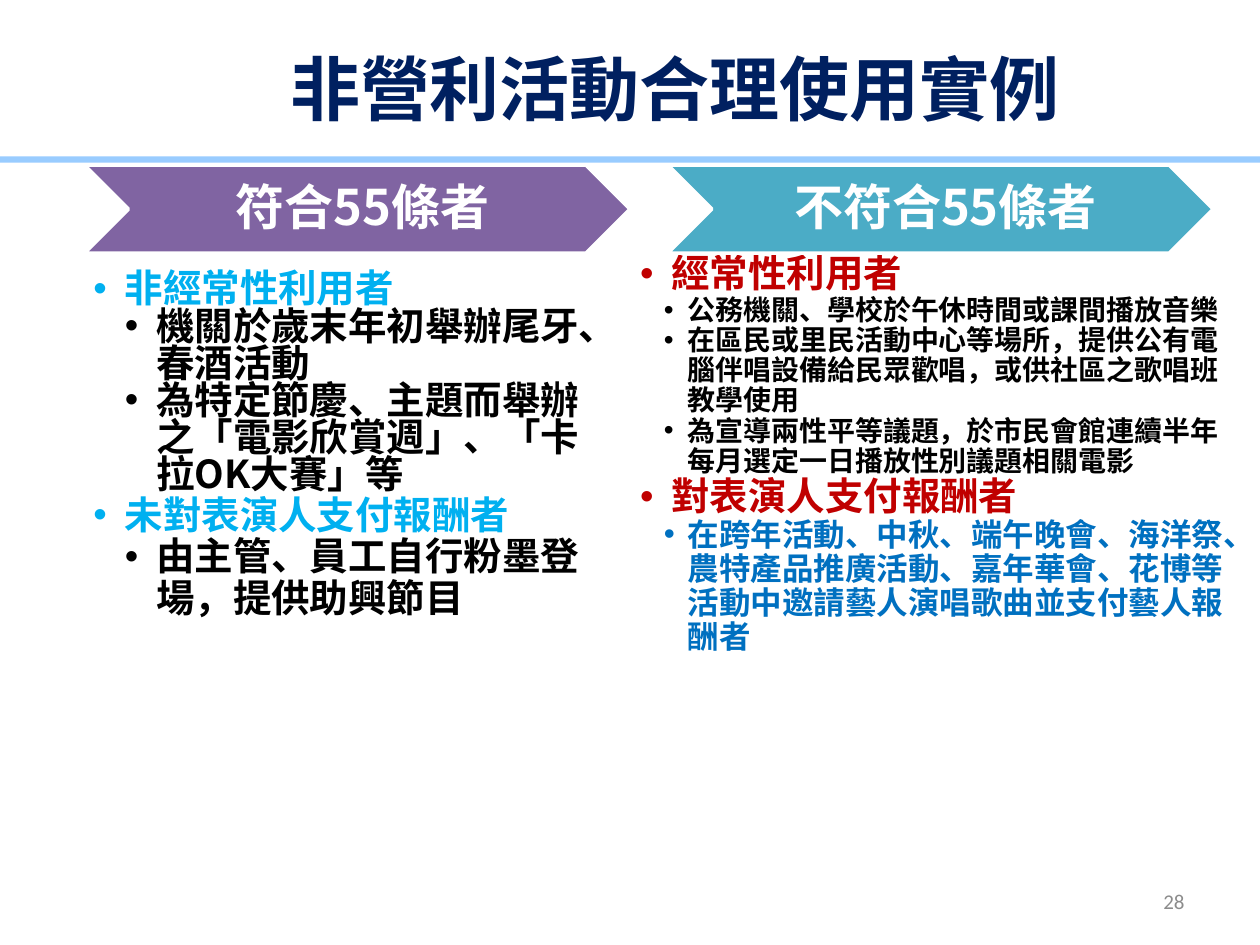
from lxml import etree
from pptx import Presentation
from pptx.dml.color import RGBColor
from pptx.enum.shapes import MSO_SHAPE
from pptx.enum.text import MSO_ANCHOR, MSO_AUTO_SIZE, PP_ALIGN
from pptx.oxml.ns import qn
from pptx.util import Inches, Pt

COLORS = {
    "navy": "002060", "rule": "99CCFF", "purple": "8064A2", "teal": "4BACC6",
    "white": "FFFFFF", "black": "000000", "sky": "00B0F0", "red": "C00000",
    "blue": "0070C0", "gray": "8C8C8C",
}
CJK_FONT = "Noto Sans CJK SC"


class SlideBuilder:
    """Holds the style and the current slide."""

    def __init__(self, slide):
        self.slide = slide

    def color(self, name):
        return RGBColor.from_string(COLORS[name])

    def place(self, shape, left, top, width, height):
        shape.left, shape.top = Inches(left), Inches(top)
        shape.width, shape.height = Inches(width), Inches(height)

    def frame(self, shape, insets=None, anchor=MSO_ANCHOR.MIDDLE):
        frame = shape.text_frame
        frame.word_wrap = True
        frame.auto_size = MSO_AUTO_SIZE.NONE
        frame.vertical_anchor = anchor
        if insets:
            (frame.margin_left, frame.margin_top,
             frame.margin_right, frame.margin_bottom) = map(Inches, insets)
        return frame

    def run(self, paragraph, text, size, color, bold=True, font=CJK_FONT):
        run = paragraph.add_run()
        run.text = text
        run.font.size = Pt(size)
        run.font.bold = bold
        run.font.color.rgb = self.color(color)
        run.font.name = font
        east_asian = etree.SubElement(run.font._element, qn("a:ea"))
        east_asian.set("typeface", font)

    def title(self, text, box):
        shape = self.slide.shapes.title
        self.place(shape, *box)
        paragraph = self.frame(shape).paragraphs[0]
        paragraph.alignment = PP_ALIGN.CENTER
        self.run(paragraph, text, 40, "navy")

    def shape(self, preset, box, fill, line=None):
        shape = self.slide.shapes.add_shape(preset, *map(Inches, box))
        shape.shadow.inherit = False
        shape.fill.solid()
        shape.fill.fore_color.rgb = self.color(fill)
        if line:
            shape.line.color.rgb = self.color(line)
            shape.line.width = Pt(2)
        else:
            shape.line.fill.background()

    def text(self, text, box, size, color, align, insets=None, spacing=None, **style):
        shape = self.slide.shapes.add_textbox(*map(Inches, box))
        paragraph = self.frame(shape, insets).paragraphs[0]
        paragraph.alignment = align
        paragraph.line_spacing = spacing
        self.run(paragraph, text, size, color, **style)

    def header(self, text, left, fill):
        top, height = 1.31, 0.7
        self.shape(MSO_SHAPE.CHEVRON, (left, top, 4.33, height), fill, "white")
        self.text(text, (left + 0.35, top, 3.63, height), 28, "white",
                  PP_ALIGN.CENTER, (0.12, 0.04, 0.04, 0.04), 0.9)

    def bullets(self, index, box, items, sub_indent, sub_hanging):
        shape = self.slide.placeholders[index]
        self.place(shape, *box)
        frame = self.frame(shape, (0, 0, 0, 0), MSO_ANCHOR.TOP)
        indents = [(0.25, 0.25), (sub_indent, sub_hanging)]
        for number, (level, text, size, color, spacing) in enumerate(items):
            paragraph = frame.add_paragraph() if number else frame.paragraphs[0]
            paragraph.level = level
            indent, hanging = indents[level]
            properties = paragraph._p.get_or_add_pPr()
            properties.set("marL", str(Inches(indent)))
            properties.set("indent", str(-Inches(hanging)))
            etree.SubElement(properties, qn("a:buFont")).set("typeface", "Arial")
            etree.SubElement(properties, qn("a:buChar")).set("char", "•")
            paragraph.alignment = PP_ALIGN.LEFT
            paragraph.line_spacing = spacing
            paragraph.space_before = Pt(0)
            self.run(paragraph, text, size, color)


# Each item: level, text, size, color, line spacing
QUALIFYING = [
    (0, "非經常性利用者", 22, "sky", 0.9),
    (1, "機關於歲末年初舉辦尾牙、春酒活動", 22, "black", 0.8),
    (1, "為特定節慶、主題而舉辦之「電影欣賞週」、「卡拉OK大賽」等", 22, "black", 0.8),
    (0, "未對表演人支付報酬者", 22, "sky", 0.9),
    (1, "由主管、員工自行粉墨登場，提供助興節目", 22, "black", 0.9),
]
NOT_QUALIFYING = [
    (0, "經常性利用者", 22, "red", 0.9),
    (1, "公務機關、學校於午休時間或課間播放音樂", 16, "black", 0.9),
    (1, "在區民或里民活動中心等場所，提供公有電腦伴唱設備給民眾歡唱，"
        "或供社區之歌唱班教學使用", 16, "black", 0.9),
    (1, "為宣導兩性平等議題，於市民會館連續半年每月選定一日播放性別議題相關電影",
     16, "black", 0.9),
    (0, "對表演人支付報酬者", 22, "red", 0.9),
    (1, "在跨年活動、中秋、端午晚會、海洋祭、農特產品推廣活動、嘉年華會、"
        "花博等活動中邀請藝人演唱歌曲並支付藝人報酬者", 18, "blue", 0.9),
]


def main():
    presentation = Presentation()
    presentation.slide_width, presentation.slide_height = Inches(10), Inches(7.5)
    two_content = presentation.slide_layouts[3]
    builder = SlideBuilder(presentation.slides.add_slide(two_content))

    # Title and rule
    builder.title("非營利活動合理使用實例", (1.38, 0.29, 7.95, 0.81))
    builder.shape(MSO_SHAPE.RECTANGLE, (-0.04, 1.24, 10.06, 0.05), "rule")

    # Left column: qualifying cases
    builder.header("符合55條者", 0.67, "purple")
    builder.bullets(1, (0.74, 2.14, 4.07, 3.69), QUALIFYING, 0.5, 0.25)

    # Right column: cases that do not qualify
    builder.header("不符合55條者", 5.3, "teal")
    builder.bullets(2, (5.08, 2.02, 4.73, 3.71), NOT_QUALIFYING, 0.38, 0.19)

    # Page number
    builder.text("28", (7.17, 6.95, 2.33, 0.4), 12, "gray", PP_ALIGN.RIGHT,
                 bold=False, font="Calibri")

    presentation.save("out.pptx")


if __name__ == "__main__":
    main()
